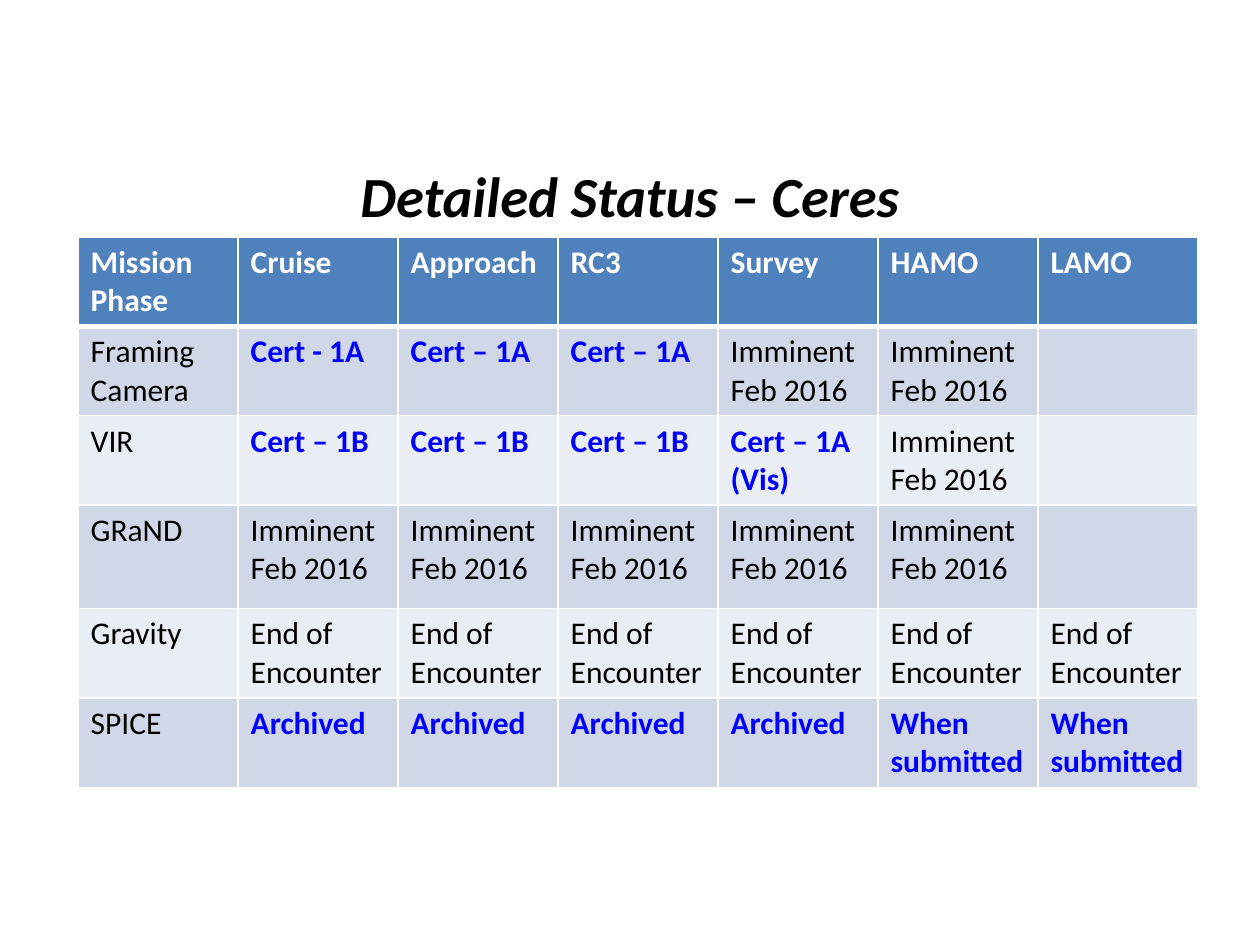
from lxml import etree
from pptx import Presentation
from pptx.dml.color import RGBColor
from pptx.enum.text import MSO_ANCHOR, PP_ALIGN
from pptx.oxml.ns import qn
from pptx.util import Inches, Pt

CENTER = PP_ALIGN.CENTER
MIDDLE = MSO_ANCHOR.MIDDLE
FONT = "Calibri"
COLORS = {
    "text": "000000",
    "done": "0000FF",
    "white": "FFFFFF",
    "header": "4F81BD",
    "odd": "D0D8E8",
    "even": "E9EDF4",
}
DONE_STARTS = ("Cert", "Archived", "When")
SOON = "Imminent\nFeb 2016"
STATUS = [
    ["Mission Phase", "Cruise", "Approach", "RC3", "Survey", "HAMO", "LAMO"],
    ["Framing Camera", "Cert - 1A", "Cert – 1A", "Cert – 1A", SOON, SOON, ""],
    ["VIR"] + ["Cert – 1B"] * 3 + ["Cert – 1A (Vis)", SOON, ""],
    ["GRaND"] + [SOON] * 5 + [""],
    ["Gravity"] + ["End of Encounter"] * 6,
    ["SPICE"] + ["Archived"] * 4 + ["When submitted"] * 2,
]
ROW_HEIGHTS = [0.71, 0.71, 0.71, 0.82, 0.71, 0.71]
COLUMN_WIDTH = 1.27


def rgb(name):
    """Return the named colour."""
    return RGBColor.from_string(COLORS[name])


def style_paragraph(para, size, color, bold, italic=False):
    """Set the font of a whole paragraph."""
    font = para.font
    font.name, font.size = FONT, Pt(size)
    font.bold, font.italic = bold, italic
    font.color.rgb = rgb(color)


def add_title(slide, text):
    """Add the centred slide title."""
    box = slide.shapes.add_textbox(Inches(0.5), Inches(1.22), Inches(9), Inches(0.65))
    frame = box.text_frame
    frame.word_wrap = True
    frame.vertical_anchor = MIDDLE
    para = frame.paragraphs[0]
    para.text = text
    para.alignment = CENTER
    style_paragraph(para, 32.4, "black" if "black" in COLORS else "text", True, True)


def set_borders(cell, widths):
    """Give a cell white borders with a width in points for each side."""
    properties = cell._tc.get_or_add_tcPr()
    for side, width in widths.items():
        line = etree.SubElement(properties, qn(f"a:ln{side}"), w=str(Pt(width)))
        fill = etree.SubElement(line, qn("a:solidFill"))
        etree.SubElement(fill, qn("a:srgbClr"), val=COLORS["white"])


def fill_cell(cell, text, row):
    """Write and style one status cell according to its row and text."""
    header = row == 0
    done = text.startswith(DONE_STARTS)
    color = "white" if header else "done" if done else "text"
    cell.text = text
    for para in cell.text_frame.paragraphs:
        style_paragraph(para, 18, color, header or done)
    set_borders(cell, {"L": 1, "R": 1, "T": 3 if row == 1 else 1, "B": 3 if header else 1})
    cell.fill.solid()
    cell.fill.fore_color.rgb = rgb("header" if header else "odd" if row % 2 else "even")


def add_status_table(slide):
    """Add the table of archive status by instrument and mission phase."""
    columns = len(STATUS[0])
    table = slide.shapes.add_table(
        len(STATUS), columns, Inches(0.62), Inches(1.88),
        Inches(COLUMN_WIDTH * columns), Inches(sum(ROW_HEIGHTS)),
    ).table
    for column in table.columns:
        column.width = Inches(COLUMN_WIDTH)
    for row, (height, texts) in enumerate(zip(ROW_HEIGHTS, STATUS)):
        table.rows[row].height = Inches(height)
        for column, text in enumerate(texts):
            fill_cell(table.cell(row, column), text, row)


def main():
    """Build and save the deck."""
    deck = Presentation()
    deck.slide_width, deck.slide_height = Inches(10), Inches(7.5)
    slide = deck.slides.add_slide(deck.slide_layouts[6])
    add_title(slide, "Detailed Status – Ceres")
    add_status_table(slide)
    deck.save("out.pptx")


if __name__ == "__main__":
    main()
